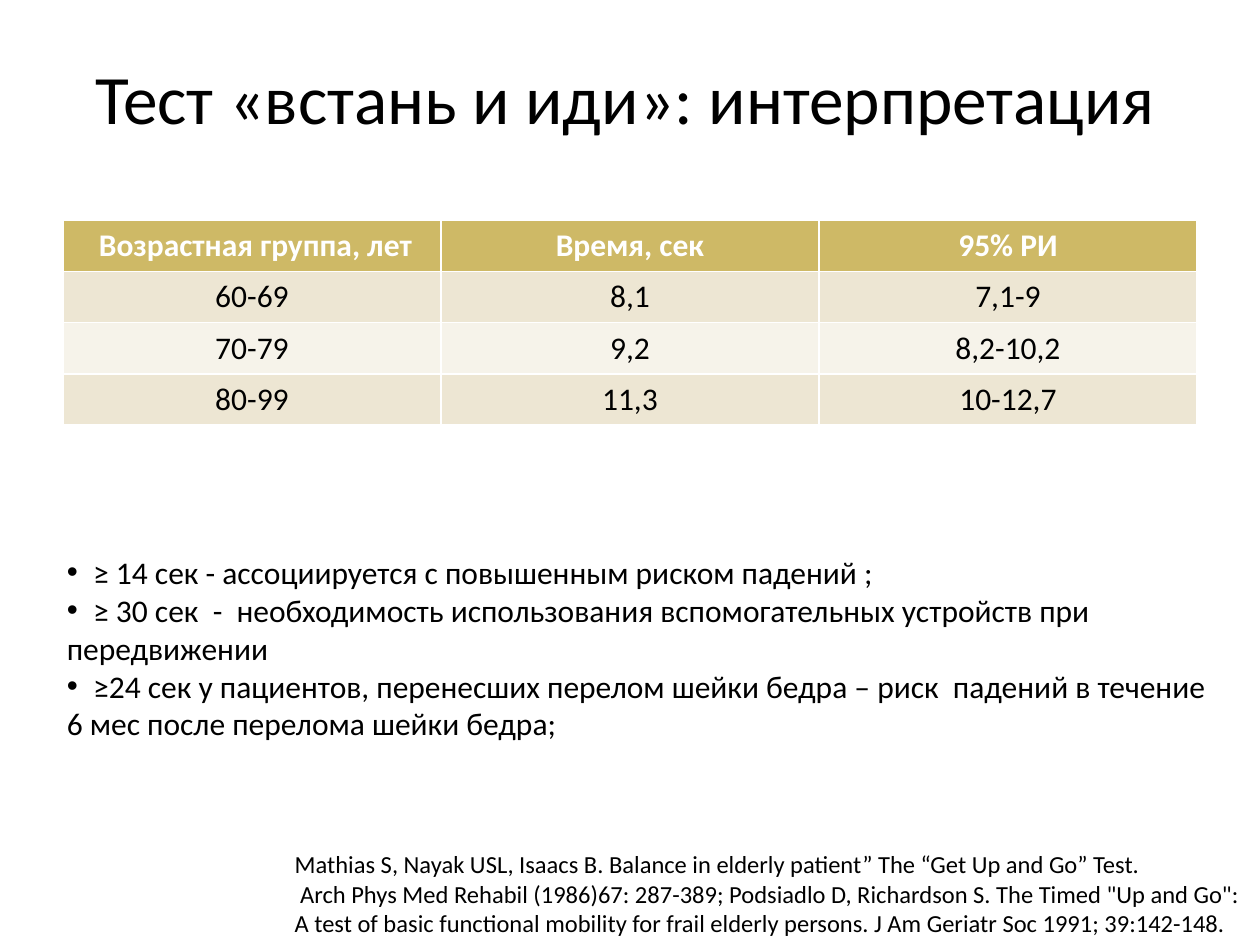
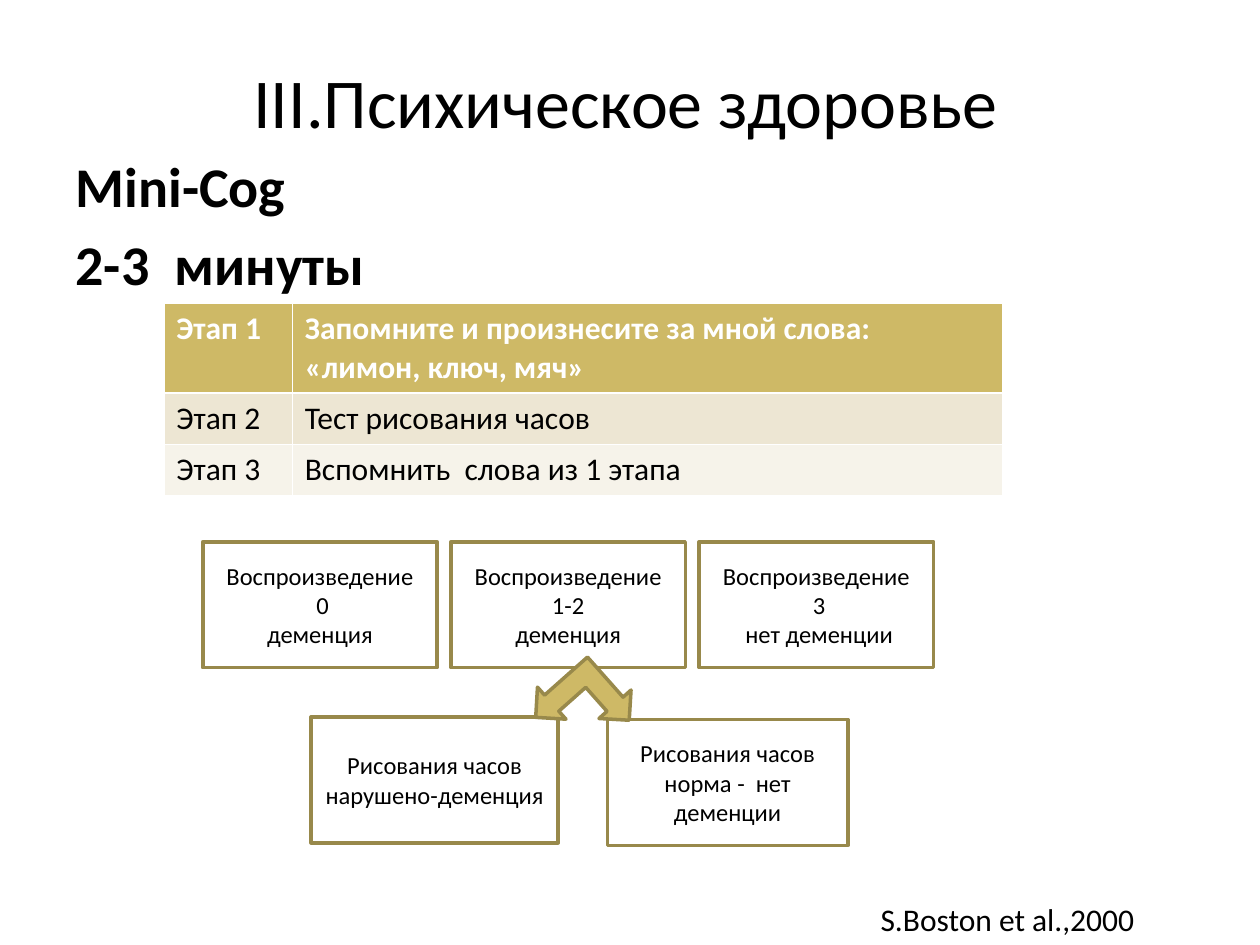
from lxml import etree
from pptx import Presentation, util as u
from pptx.dml.color import RGBColor
from pptx.enum import shapes, text
from pptx.oxml.ns import qn

tint = RGBColor.from_string
INK, PAPER, GOLD, BRONZE = "000000", "FFFFFF", "CEB966", "98894B"
BANDS = ["F6F3EA", "EDE6D3"]
FONT = "Calibri"
LEFT, CENTER = text.PP_ALIGN.LEFT, text.PP_ALIGN.CENTER

deck = Presentation()
deck.slide_width, deck.slide_height = u.Inches(10), u.Inches(7.5)
GRID = deck.slide_width / 100


def span(*cells):
    return [u.Emu(round(GRID * cell)) for cell in cells]


def write(frame, lines, size, color=INK, bold=False, align=LEFT):
    frame.text = "\n".join(lines)
    frame.word_wrap = True
    for paragraph in frame.paragraphs:
        paragraph.alignment = align
        paragraph.font.name = FONT
        paragraph.font.size = u.Pt(size)
        paragraph.font.bold = bold
        paragraph.font.color.rgb = tint(color)


pages = [
    {
        "title": "Тест «встань и иди»: интерпретация",
        "title_size": 39.6,
        "title_span": (2.8, 3, 93.7, 9.3),
        "body": [
            "\t≥ 14 сек - ассоциируется с повышенным риском падений ;",
            "\t≥ 30 сек  -  необходимость использования вспомогательных устройств при передвижении",
            "\t≥24 сек у пациентов, перенесших перелом шейки бедра – риск  падений в течение 6 мес после перелома шейки бедра;",
        ],
        "body_size": 18,
        "body_span": (4.3, 43.4, 92.9, 16.2),
        "bullets": True,
        "rows": [
            [" Возрастная группа, лет", "Время, сек", "95% РИ"],
            ["60-69", "8,1", "7,1-9"],
            ["70-79", "9,2", "8,2-10,2"],
            ["80-99", "11,3", "10-12,7"],
        ],
        "table_corner": (5, 17.5),
        "columns": [30, 30, 30],
        "heights": [4.05] * 4,
        "table_align": CENTER,
        "citation": [
            "Mathias S, Nayak USL, Isaacs B. Balance in elderly patient” The “Get Up and Go” Test.",
            ' Arch Phys Med Rehabil (1986)67: 287-389; Podsiadlo D, Richardson S. The Timed "Up and Go":',
            "A test of basic functional mobility for frail elderly persons. J Am Geriatr Soc 1991; 39:142-148.",
        ],
        "citation_size": 14,
        "citation_span": (22.4, 66.9, 77.6, 8.1),
    },
    {
        "title": "III.Психическое здоровье",
        "title_size": 40,
        "title_span": (2.8, 2.9, 93.7, 10.2),
        "body": ["Mini-Cog", "2-3  минуты"],
        "body_size": 32,
        "body_span": (5, 11.5, 90, 55.5),
        "bullets": False,
        "rows": [
            ["Этап 1", "Запомните и произнесите за мной слова: «лимон, ключ, мяч»"],
            ["Этап 2", "Тест рисования часов"],
            ["Этап 3", "Вспомнить  слова из 1 этапа"],
        ],
        "table_corner": (13, 24.1),
        "columns": [10.2, 56.4],
        "heights": [7, 4.05, 4.05],
        "table_align": LEFT,
        "citation": ["S.Boston et al.,2000"],
        "citation_size": 18,
        "citation_span": (68.9, 70.9, 24, 4),
    },
]

for page in pages:
    slide = deck.slides.add_slide(deck.slide_layouts[1])
    title, body = slide.placeholders
    for part, key in ((title, "title"), (body, "body")):
        part.left, part.top, part.width, part.height = span(*page[key + "_span"])
        part.text_frame.auto_size = text.MSO_AUTO_SIZE.NONE
    write(title.text_frame, [page["title"]], page["title_size"], align=CENTER)
    write(body.text_frame, page["body"], page["body_size"], bold=not page["bullets"])
    for item in body.text_frame.paragraphs:
        if page["bullets"]:
            item.space_before = u.Pt(0)
        props = item._p.get_or_add_pPr()
        props.set("marL", "0")
        props.set("indent", "0")
        defaults = props.find(qn("a:defRPr"))
        if page["bullets"]:
            marks = [etree.Element(qn("a:buFont"), typeface="Arial"),
                     etree.Element(qn("a:buChar"), char="•"),
                     etree.Element(qn("a:tabLst"))]
            etree.SubElement(marks[-1], qn("a:tab"), pos=str(span(2.1)[0]), algn="l")
        else:
            marks = [etree.Element(qn("a:buNone"))]
        for mark in marks:
            defaults.addprevious(mark)

    rows, columns, heights = page["rows"], page["columns"], page["heights"]
    grid = slide.shapes.add_table(
        len(rows), len(columns),
        *span(*page["table_corner"], sum(columns), sum(heights))).table
    for column, width in zip(grid.columns, span(*columns)):
        column.width = width
    for r, (row, height) in enumerate(zip(grid.rows, span(*heights))):
        row.height = height
        for cell, words in zip(row.cells, rows[r]):
            cell.fill.solid()
            cell.fill.fore_color.rgb = tint(BANDS[r % 2] if r else GOLD)
            write(cell.text_frame, [words], 18, INK if r else PAPER, r == 0, page["table_align"])

    citation = slide.shapes.add_textbox(*span(*page["citation_span"]))
    write(citation.text_frame, page["citation"], page["citation_size"])

recalls = [
    ["Воспроизведение", " 0", "деменция"],
    ["Воспроизведение 1-2", "деменция"],
    ["Воспроизведение", " 3", " нет деменции"],
]
outcomes = [((16.1 + 19.7 * i, 43, 18.6, 10), lines) for i, lines in enumerate(recalls)]
outcomes += [
    ((24.7, 56.9, 19.6, 10), ["Рисования часов нарушено-деменция"]),
    ((48.2, 57.1, 19.1, 10), ["Рисования часов норма -  нет деменции"]),
]
for place, lines in outcomes:
    outcome = slide.shapes.add_shape(shapes.MSO_SHAPE.RECTANGLE, *span(*place))
    outcome.shadow.inherit = False
    outcome.fill.background()
    outcome.line.color.rgb = tint(BRONZE)
    outcome.line.width = u.Pt(2)
    write(outcome.text_frame, lines, 14, align=CENTER)

fork = slide.shapes.add_shape(shapes.MSO_SHAPE.LEFT_UP_ARROW, *span(42.9, 52.3, 6.8, 7.1))
fork.rotation = 228.4
fork.shadow.inherit = False
fork.fill.solid()
fork.fill.fore_color.rgb = tint(GOLD)
fork.line.color.rgb = tint(BRONZE)
fork.line.width = u.Pt(2)

deck.save("out.pptx")
